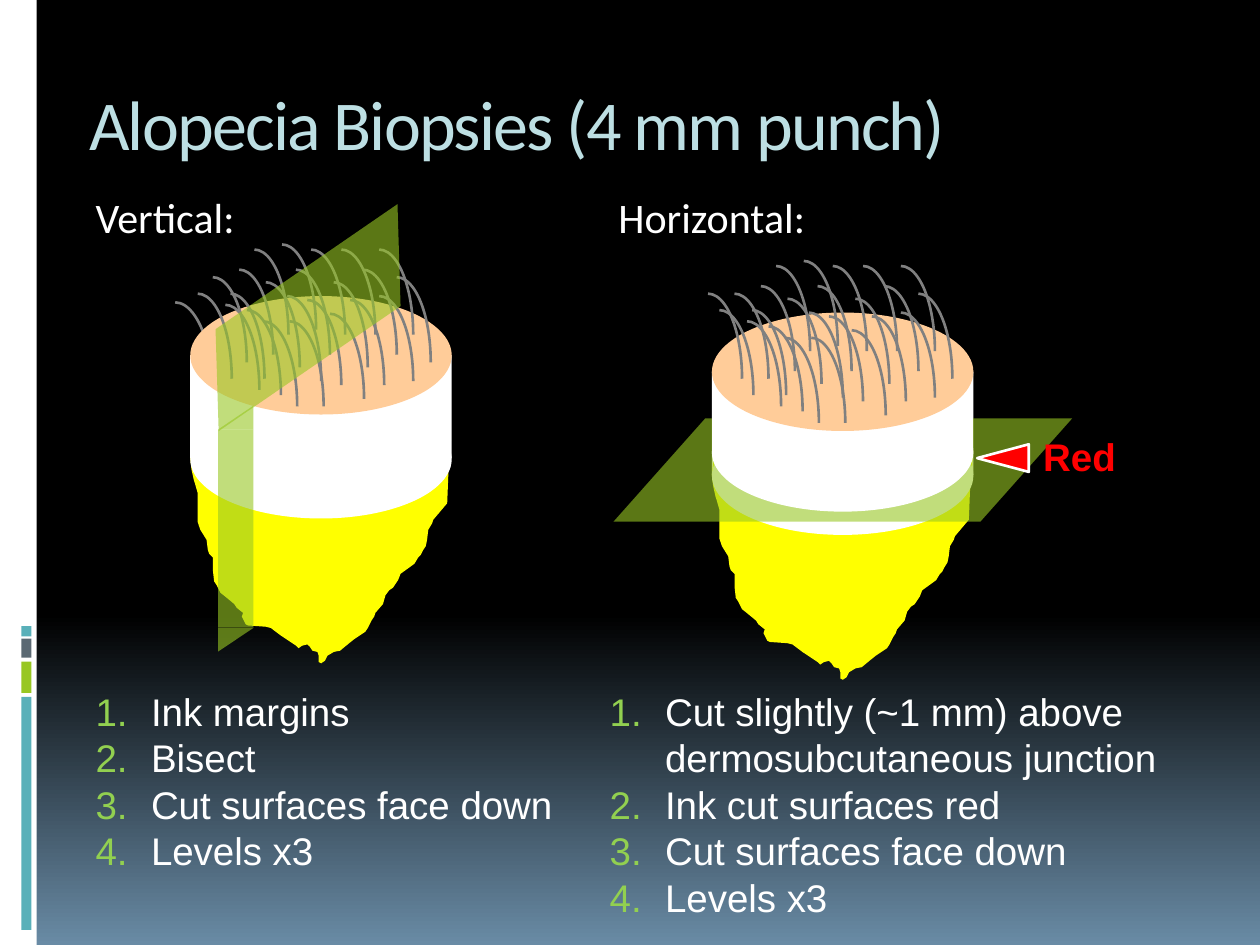
from lxml import etree
from pptx import Presentation
from pptx.dml.color import RGBColor
from pptx.enum.shapes import MSO_SHAPE
from pptx.oxml.ns import qn
from pptx.util import Pt

RECTANGLE = MSO_SHAPE.RECTANGLE
OVAL = MSO_SHAPE.OVAL
ARC = MSO_SHAPE.ARC
PARALLELOGRAM = MSO_SHAPE.FLOWCHART_DATA
PROCESS = MSO_SHAPE.FLOWCHART_PROCESS
RIGHT_TRIANGLE = MSO_SHAPE.RIGHT_TRIANGLE
TRIANGLE = MSO_SHAPE.ISOSCELES_TRIANGLE
FAT = "fat"


class Theme:
    white, black, sky = "FFFFFF", "000000", "698BA5"
    teal, green, slate = "59B0B9", "98C723", "5B6973"
    title, number, red = "BDDFE3", "92D050", "FF0000"
    skin, fat, hair = "FFCC99", "FFFF00", "808080"
    heading_font, body_font = "Calibri", "Arial"
    title_size, heading_size, body_size = Pt(40), Pt(24), Pt(22)
    line_width = Pt(1.5)
    plane_alpha = 60


presentation = Presentation()
presentation.slide_width, presentation.slide_height = Pt(720), Pt(540)
slide = presentation.slides.add_slide(presentation.slide_layouts[6])
shapes = slide.shapes


def add_preset(kind, box, fill=None, line=None, alpha=None, rotation=0, flip=False):
    shape = shapes.add_shape(kind, *map(Pt, box))
    shape.shadow.inherit = False
    shape.rotation = rotation
    if flip:
        shape._element.spPr.xfrm.set("flipH", "1")
    if fill:
        shape.fill.solid()
        shape.fill.fore_color.rgb = RGBColor.from_string(fill)
    else:
        shape.fill.background()
    if alpha:
        colour = shape._element.spPr.find(qn("a:solidFill"))[0]
        etree.SubElement(colour, qn("a:alpha")).set("val", str(alpha * 1000))
    if line:
        shape.line.color.rgb = RGBColor.from_string(line)
        shape.line.width = Theme.line_width
    else:
        shape.line.fill.background()


def add_text(box, lines, font, size, colour, bold=False, numbered=False):
    frame = shapes.add_textbox(*map(Pt, box)).text_frame
    frame.word_wrap = True
    for index, line in enumerate(lines):
        paragraph = frame.paragraphs[0] if index == 0 else frame.add_paragraph()
        paragraph.text = line
        if numbered:
            paragraph.line_spacing = Pt(26.5)
            properties = paragraph._p.get_or_add_pPr()
            properties.set("marL", str(Pt(31.7)))
            properties.set("indent", str(-Pt(31.7)))
            bullet_colour = etree.SubElement(properties, qn("a:buClr"))
            etree.SubElement(bullet_colour, qn("a:srgbClr")).set("val", Theme.number)
            etree.SubElement(properties, qn("a:buFont")).set("typeface", font)
            etree.SubElement(properties, qn("a:buAutoNum")).set("type", "arabicPeriod")
        paragraph.font.name, paragraph.font.size = font, size
        paragraph.font.bold = bold
        paragraph.font.color.rgb = RGBColor.from_string(colour)
    return frame


# Background: black down to 65 %, then fading to blue
background = slide.background.fill
background.gradient()
background.gradient_angle = 270
for stop, colour, position in zip(
        background.gradient_stops, (Theme.black, Theme.sky), (0.65, 1)):
    stop.color.rgb = RGBColor.from_string(colour)
    stop.position = position

# Side strip with its accent bars
add_preset(RECTANGLE, (0, 0, 20.9, 540), Theme.white)
for top, height, colour in [(398.2, 133.2, Theme.teal), (378, 18, Theme.green),
                            (365, 10.8, Theme.slate), (357.8, 5.8, Theme.teal)]:
    add_preset(RECTANGLE, (12.2, top, 5.8, height), colour)

# Headings
for left, width, heading in [(47.5, 95, "Vertical:"), (346.3, 122.4, "Horizontal:")]:
    add_text((left, 105.8, width, 36), [heading],
             Theme.heading_font, Theme.heading_size, Theme.white)
title = add_text((43.9, 40.3, 640, 72), ["Alopecia Biopsies (4 mm punch)"],
                 Theme.heading_font, Theme.title_size, Theme.title)
title.margin_top = Pt(5.6)
title.paragraphs[0].runs[0]._r.get_or_add_rPr().set("spc", "-100")

# Ragged outline of the fat, in hundredths of an inch
fat_outline = [
    (1, 16), (0, 25), (1, 34), (3, 43), (4, 46), (6, 53), (6, 76), (7, 79), (8, 82),
    (13, 90), (14, 98), (15, 101), (18, 104), (18, 114), (19, 123), (21, 126),
    (24, 132), (29, 136), (35, 141), (37, 144), (42, 148), (41, 151), (44, 157),
    (46, 158), (60, 159), (64, 160), (72, 166), (78, 170), (84, 174), (86, 176),
    (89, 174), (93, 173), (95, 175), (97, 178), (101, 179), (102, 182), (102, 187),
    (104, 188), (107, 186), (109, 182), (114, 179), (119, 178), (125, 173),
    (130, 169), (136, 165), (139, 163), (141, 160), (144, 154), (146, 151),
    (147, 148), (153, 141), (155, 134), (158, 130), (161, 128), (165, 122),
    (167, 117), (178, 109), (181, 104), (183, 102), (185, 98), (187, 95), (188, 90),
    (189, 82), (192, 77), (193, 74), (204, 61), (205, 35), (206, 32), (207, 11),
    (193, 10), (138, 4), (100, 5), (64, 4), (28, 2), (13, 2), (6, 8)]

# Hair places, measured from the corner of the skin surface
hairs = [
    (17.3, -26.6), (88.6, -26.6), (47.5, 2.2), (79.2, -15.1), (88.6, 0),
    (98.6, -10.8), (60.5, 10.1), (37.4, 14.4), (36, 0), (72, 2.2), (-15.1, -1.4),
    (0.7, 5), (62.6, -7.9), (-6.5, -10.8), (23.8, -7.9), (8.6, -15.1), (41, -15.1),
    (3.6, -1.4), (33.1, -29.5), (49.7, -26.6), (13, 7.9), (67, -26.6), (22.3, 14.4)]
hair_size = (38.9, 97.2)

# Layers of each sample from back to front: kind, box from the skin corner, fill, alpha
width, disc_height = 149.4, 67.7
fat = (FAT, (0, 74.5), Theme.fat, None)
wall = (RECTANGLE, (0, 33.8, width, 59), Theme.white, None)
base = (OVAL, (0, 59.4, width, disc_height), Theme.white, None)
skin = (OVAL, (0, 0, width, disc_height), Theme.skin, None)
cut_plane = (PARALLELOGRAM, (-56.2, 60.5, 262.1, 59), Theme.green, Theme.plane_alpha)
upper_base = (OVAL, (0, 46.1, width, disc_height), Theme.white, None)
upper_wall = (PROCESS, (0, 59, width, 20.9), Theme.white, None)

# Vertical sample has one larger hair behind; horizontal has one more in front
add_preset(ARC, (77.8, 172.8, 44.6, 112.3), line=Theme.hair)
samples = [
    (108.7, 169.2, [fat, wall, base, skin], hairs),
    (406.8, 178.6, [wall, fat, base, cut_plane, upper_base, upper_wall, skin],
     hairs + [(-21.6, -10.8)])]
for left, top, layers, sample_hairs in samples:
    for kind, (x, y, *size), colour, alpha in layers:
        if kind == FAT:
            builder = shapes.build_freeform(*fat_outline[0], scale=Pt(0.72))
            builder.add_line_segments(fat_outline[1:], close=True)
            fat_shape = builder.convert_to_shape(Pt(left + x), Pt(top + y))
            fat_shape.shadow.inherit = False
            fat_shape.fill.solid()
            fat_shape.fill.fore_color.rgb = RGBColor.from_string(colour)
            fat_shape.line.fill.background()
        else:
            add_preset(kind, (left + x, top + y, *size), colour, alpha=alpha)
    for x, y in sample_hairs:
        add_preset(ARC, (left + x, top + y, *hair_size), line=Theme.hair)

# Vertical cutting plane
for kind, box, rotation, flip in [
        (RIGHT_TRIANGLE, (124.6, 231.8, 20.2, 13.7), 0, True),
        (RIGHT_TRIANGLE, (124.6, 358.6, 20.5, 13.7), 180, True),
        (RECTANGLE, (124.6, 245.5, 20.2, 113), 0, False),
        (PARALLELOGRAM, (97.2, 157, 157.7, 49), 325.5, False)]:
    add_preset(kind, box, Theme.green, alpha=Theme.plane_alpha,
               rotation=rotation, flip=flip)

# Marker for the inked surface
add_preset(TRIANGLE, (565.2, 247, 15.8, 29.5), Theme.red, Theme.white, rotation=270)
add_text((589, 244.1, 56.9, 33.8), ["Red"],
         Theme.body_font, Theme.body_size, Theme.red, bold=True)

# Steps
closing_steps = ["Cut surfaces face down", "Levels x3"]
for box, opening_steps in [
        ((341.3, 389.5, 352.8, 140.4),
         ["Cut slightly (~1 mm) above dermosubcutaneous junction",
          "Ink cut surfaces red"]),
        ((47.5, 389.5, 279.4, 113.8), ["Ink margins", "Bisect"])]:
    add_text(box, opening_steps + closing_steps,
             Theme.body_font, Theme.body_size, Theme.white, numbered=True)

presentation.save("out.pptx")
